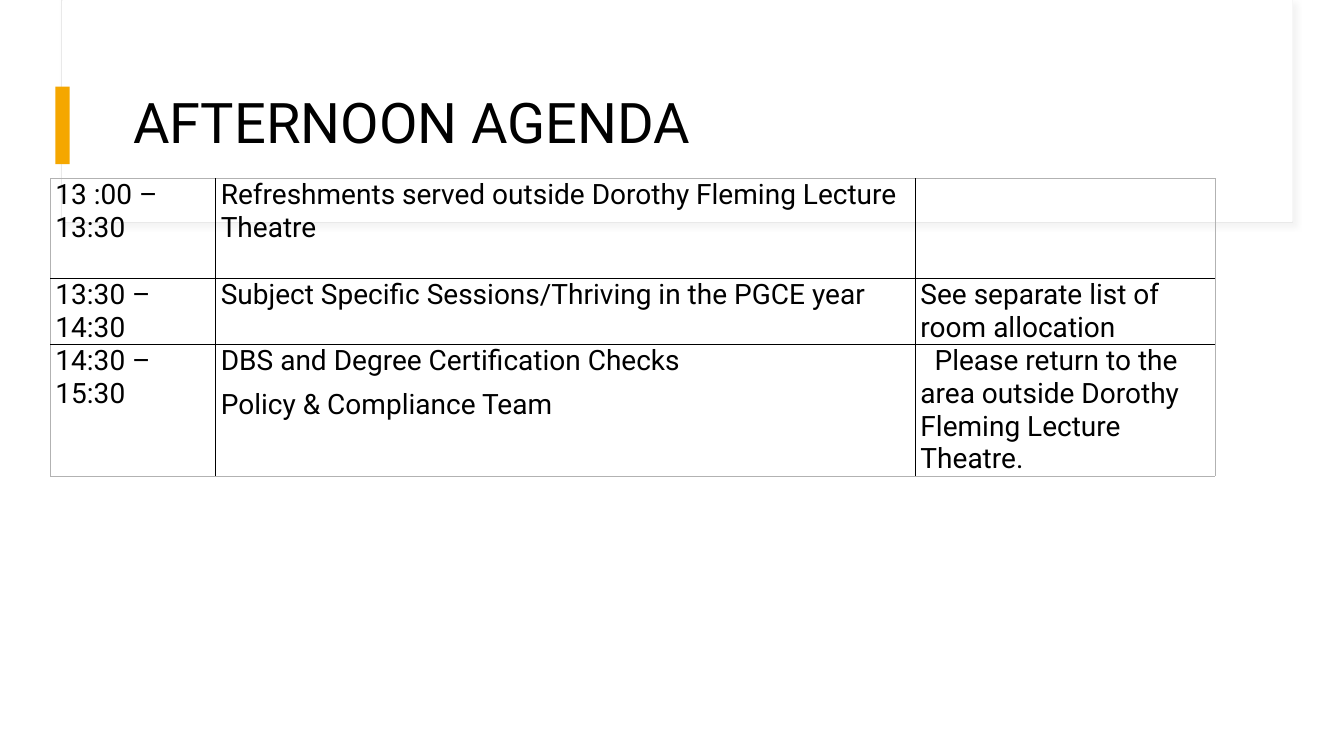
from lxml import etree
from pptx import Presentation
from pptx.dml.color import RGBColor
from pptx.enum.shapes import MSO_SHAPE
from pptx.enum.text import MSO_ANCHOR, MSO_AUTO_SIZE, PP_ALIGN
from pptx.oxml.ns import qn
from pptx.util import Inches, Pt

RECT = MSO_SHAPE.RECTANGLE
MIDDLE = MSO_ANCHOR.MIDDLE
FIXED = MSO_AUTO_SIZE.NONE
LEFT = PP_ALIGN.LEFT
FONT = "Roboto"
BLACK, GREY = "000000", "B2B2B2"


def paint(target, color):
    target.solid()
    target.fore_color.rgb = RGBColor.from_string(color)


def write(para, text, size):
    run = para.add_run()
    run.text = text
    run.font.name = FONT
    run.font.size = Pt(size)
    paint(run.font.fill, BLACK)


deck = Presentation()
deck.slide_width, deck.slide_height = Inches(13.33), Inches(7.5)
slide = deck.slides.add_slide(deck.slide_layouts[5])
shapes = slide.shapes

panels = [
    (0.61, 0, 12.21, 2.21, "FFFFFF", "E9E9E9"),
    (0.62, 0, 12.2, 2.2, "FFFFFF", None),
    (0.55, 0.86, 0.14, 0.77, "F5A700", None),
]
for *box, color, edge in panels:
    panel = shapes.add_shape(RECT, *map(Inches, box))
    panel.shadow.inherit = False
    paint(panel.fill, color)
    if edge:
        paint(panel.line.fill, edge)
        panel.line.width = Pt(0.75)
        effect = panel.element.spPr.find(qn("a:effectLst"))
        shadow = etree.SubElement(effect, qn("a:outerShdw"), blurRad=str(Pt(4)),
                                  dist=str(Pt(3)), dir="2700000", algn="tl")
        tint = etree.SubElement(shadow, qn("a:srgbClr"), val="D9D9D9")
        etree.SubElement(tint, qn("a:alpha"), val="30000")
    else:
        panel.line.fill.background()

title = shapes.title
title.left, title.top, title.width, title.height = map(Inches, (1.22, 0.6, 11.12, 1.29))
frame = title.text_frame
frame.auto_size = FIXED
frame.word_wrap = True
frame.vertical_anchor = MIDDLE
head = frame.paragraphs[0]
head.alignment = LEFT
head.line_spacing = 0.9
write(head, "AFTERNOON AGENDA", 40)
shapes._spTree.append(title.element)

agenda = [
    [["13 :00 – 13:30"], ["Refreshments served outside Dorothy Fleming Lecture Theatre"], []],
    [["13:30 – 14:30"], ["Subject Specific Sessions/Thriving in the PGCE year"],
     ["See separate list of room allocation"]],
    [["14:30 – 15:30"], ["DBS and Degree Certification Checks", "Policy & Compliance Team"],
     ["Please return to the area outside Dorothy Fleming Lecture Theatre."]],
]
widths, heights = (1.64, 6.94, 2.97), (0.99, 0.49, 1.28)
table = shapes.add_table(3, 3, Inches(0.5), Inches(1.77),
                         Inches(sum(widths)), Inches(sum(heights))).table
table.first_row = table.horz_banding = False
for col, width in zip(table.columns, widths):
    col.width = Inches(width)
for row, height in zip(table.rows, heights):
    row.height = Inches(height)

for r, line in enumerate(agenda):
    for c, texts in enumerate(line):
        cell = table.cell(r, c)
        cell.margin_left = cell.margin_right = Inches(0.05)
        cell.margin_top = cell.margin_bottom = 0
        props = cell._tc.get_or_add_tcPr()
        sides = {"lnL": c == 0, "lnR": c == 2, "lnT": r == 0, "lnB": r == 2}
        for side, outer in sides.items():
            rule = etree.SubElement(props, qn("a:" + side), w=str(Pt(0.5 if outer else 1)))
            fill = etree.SubElement(rule, qn("a:solidFill"))
            etree.SubElement(fill, qn("a:srgbClr"), val=GREY if outer else BLACK)
        cell.fill.background()
        body = cell.text_frame
        body.paragraphs[0].font.size = Pt(20)
        for n, text in enumerate(texts):
            para = body.add_paragraph() if n else body.paragraphs[0]
            para.space_after = Pt(8)
            write(para, text, 20)

note = table.cell(2, 2).text_frame.paragraphs[0]
note._p.get_or_add_pPr().set("indent", str(Inches(0.14)))

deck.save("out.pptx")
